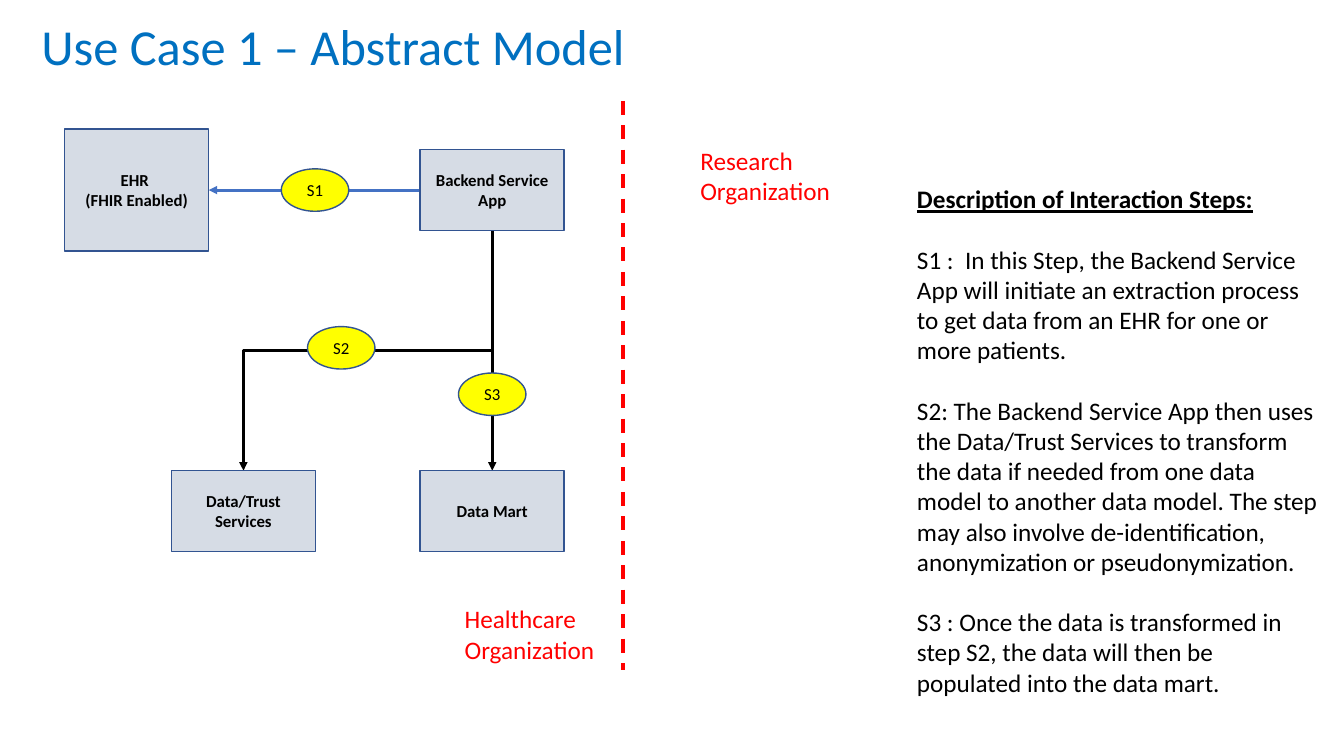
from dataclasses import dataclass

from lxml.etree import SubElement
from pptx import Presentation
from pptx.dml.color import RGBColor
from pptx.enum.dml import MSO_LINE
from pptx.enum.shapes import MSO_CONNECTOR, MSO_SHAPE
from pptx.enum.text import MSO_ANCHOR, PP_ALIGN
from pptx.oxml.ns import qn
from pptx.util import Cm, Pt


@dataclass(frozen=True)
class Theme:
    font: str = "Calibri"
    title: RGBColor = RGBColor(0x00, 0x70, 0xC0)
    ink: RGBColor = RGBColor(0x00, 0x00, 0x00)
    alert: RGBColor = RGBColor(0xFF, 0x00, 0x00)
    system_fill: RGBColor = RGBColor(0xD6, 0xDC, 0xE5)
    step_fill: RGBColor = RGBColor(0xFF, 0xFF, 0x00)
    outline: RGBColor = RGBColor(0x32, 0x54, 0x91)
    request: RGBColor = RGBColor(0x44, 0x72, 0xC4)
    title_size: Pt = Pt(36)
    body_size: Pt = Pt(18)
    node_size: Pt = Pt(12)
    paragraph_gap: Pt = Pt(21.5)


THEME = Theme()

# Node sizes, in cm
SYSTEM_WIDTH, SYSTEM_HEIGHT = 3.63, 2.04
STEP_WIDTH, STEP_HEIGHT = 1.7, 1.07

STEPS_HEADING = "Description of Interaction Steps:"
STEPS = [
    "S1 :  In this Step, the Backend Service App will initiate an extraction "
    "process to get data from an EHR for one or more patients.",
    "S2: The Backend Service App then uses the Data/Trust Services to transform "
    "the data if needed from one data model to another data model. The step may "
    "also involve de-identification, anonymization or pseudonymization.",
    "S3 : Once the data is transformed in step S2, the data will then be "
    "populated into the data mart.",
]


def apply_format(target, values):
    for attribute, value in values.items():
        setattr(target, attribute, value)


def write(frame, lines, size, color, align=PP_ALIGN.LEFT, **font_format):
    """Fill a text frame with one paragraph per line."""
    frame.word_wrap = True
    for index, line in enumerate(lines):
        paragraph = frame.paragraphs[0] if index == 0 else frame.add_paragraph()
        paragraph.alignment = align
        run = paragraph.add_run()
        run.text = line
        apply_format(run.font, {"name": THEME.font, "size": size, **font_format})
        run.font.color.rgb = color


def add_node(slide, preset, lines, left, top, width, height, fill, bold):
    node = slide.shapes.add_shape(preset, Cm(left), Cm(top), Cm(width), Cm(height))
    node.shadow.inherit = False
    node.fill.solid()
    node.fill.fore_color.rgb = fill
    node.line.color.rgb = THEME.outline
    node.line.width = Pt(1)
    node.text_frame.vertical_anchor = MSO_ANCHOR.MIDDLE
    write(node.text_frame, lines, THEME.node_size, THEME.ink, PP_ALIGN.CENTER, bold=bold)


def add_system(slide, lines, left, top, height=SYSTEM_HEIGHT):
    add_node(slide, MSO_SHAPE.RECTANGLE, lines, left, top, SYSTEM_WIDTH, height,
             THEME.system_fill, True)


def add_step(slide, label, left, top):
    add_node(slide, MSO_SHAPE.OVAL, [label], left, top, STEP_WIDTH, STEP_HEIGHT,
             THEME.step_fill, False)


def add_line(slide, start, end, color, width, kind=MSO_CONNECTOR.STRAIGHT, arrow=True):
    line = slide.shapes.add_connector(kind, *map(Cm, start + end))
    line.line.color.rgb = color
    line.line.width = Pt(width)
    if arrow:
        SubElement(line.line._get_or_add_ln(), qn("a:tailEnd"), type="triangle")
    SubElement(line._element.spPr, qn("a:effectLst"))
    return line


def add_vertical_elbow(slide, start, end, color, width):
    """Elbow that leaves downwards to the left: a level elbow turned by 90 degrees."""
    (x1, y1), (x2, y2) = start, end
    center_x, center_y = (x1 + x2) / 2, (y1 + y2) / 2
    half_run, half_rise = (y2 - y1) / 2, (x1 - x2) / 2
    elbow = add_line(slide, (center_x - half_run, center_y - half_rise),
                     (center_x + half_run, center_y + half_rise),
                     color, width, MSO_CONNECTOR.ELBOW)
    elbow._element.spPr.find(qn("a:xfrm")).set("rot", str(90 * 60000))


def add_label(slide, text, left, top):
    label = slide.shapes.add_textbox(Cm(left), Cm(top), Cm(4.34), Cm(1.8))
    write(label.text_frame, [text], THEME.body_size, THEME.alert)


def add_description(slide):
    description = slide.shapes.add_textbox(Cm(22.86), Cm(4.5), Cm(10.64), Cm(14.1))
    frame = description.text_frame
    write(frame, [STEPS_HEADING] + STEPS, THEME.body_size, THEME.ink)
    heading, *steps = frame.paragraphs
    apply_format(heading.runs[0].font, {"bold": True, "underline": True})
    for step in steps:
        step.space_before = THEME.paragraph_gap


def set_title(slide, text):
    title = slide.shapes.title
    apply_format(title, {"left": Cm(0.79), "top": Cm(0.15),
                         "width": Cm(29.21), "height": Cm(2.16)})
    title.text_frame.vertical_anchor = MSO_ANCHOR.MIDDLE
    write(title.text_frame, [text], THEME.title_size, THEME.title)
    title.text_frame.paragraphs[0].line_spacing = 0.9


def main():
    deck = Presentation()
    apply_format(deck, {"slide_width": Cm(33.87), "slide_height": Cm(19.05)})
    slide = deck.slides.add_slide(deck.slide_layouts[5])
    set_title(slide, "Use Case 1 – Abstract Model")

    # Rows and columns shared by the systems
    backend_left, backend_top = 10.59, 3.77
    ehr_left, ehr_height = 1.63, 3.07
    trust_left, lower_top = 4.32, 11.86
    backend_x = backend_left + SYSTEM_WIDTH / 2
    backend_y = backend_top + SYSTEM_HEIGHT / 2
    backend_bottom = backend_top + SYSTEM_HEIGHT
    trust_x = trust_left + SYSTEM_WIDTH / 2

    # Flows between the systems
    add_line(slide, (backend_left, backend_y), (ehr_left + SYSTEM_WIDTH, backend_y),
             THEME.request, 2)
    add_vertical_elbow(slide, (backend_x, backend_bottom), (trust_x, lower_top),
                       THEME.ink, 2)
    add_line(slide, (backend_x, backend_bottom), (backend_x, lower_top), THEME.ink, 2)

    # Systems
    add_system(slide, ["EHR ", "(FHIR Enabled)"], ehr_left,
               backend_y - ehr_height / 2, ehr_height)
    add_system(slide, ["Backend Service", "App"], backend_left, backend_top)
    add_system(slide, ["Data/Trust Services"], trust_left, lower_top)
    add_system(slide, ["Data Mart"], backend_left, lower_top)

    # Step markers on the flows
    add_step(slide, "S1", 7.09, backend_y - STEP_HEIGHT / 2)
    add_step(slide, "S2", 7.75, 8.23)
    add_step(slide, "S3", backend_x - STEP_WIDTH / 2, 9.4)

    # Boundary between the organizations
    boundary = add_line(slide, (15.7, 2.54), (15.7, 16.89), THEME.alert, 2.5, arrow=False)
    boundary.line.dash_style = MSO_LINE.DASH
    add_label(slide, "Healthcare Organization", 11.46, 15.09)
    add_label(slide, "Research Organization", 17.4, 3.53)

    add_description(slide)
    deck.save("out.pptx")


if __name__ == "__main__":
    main()
